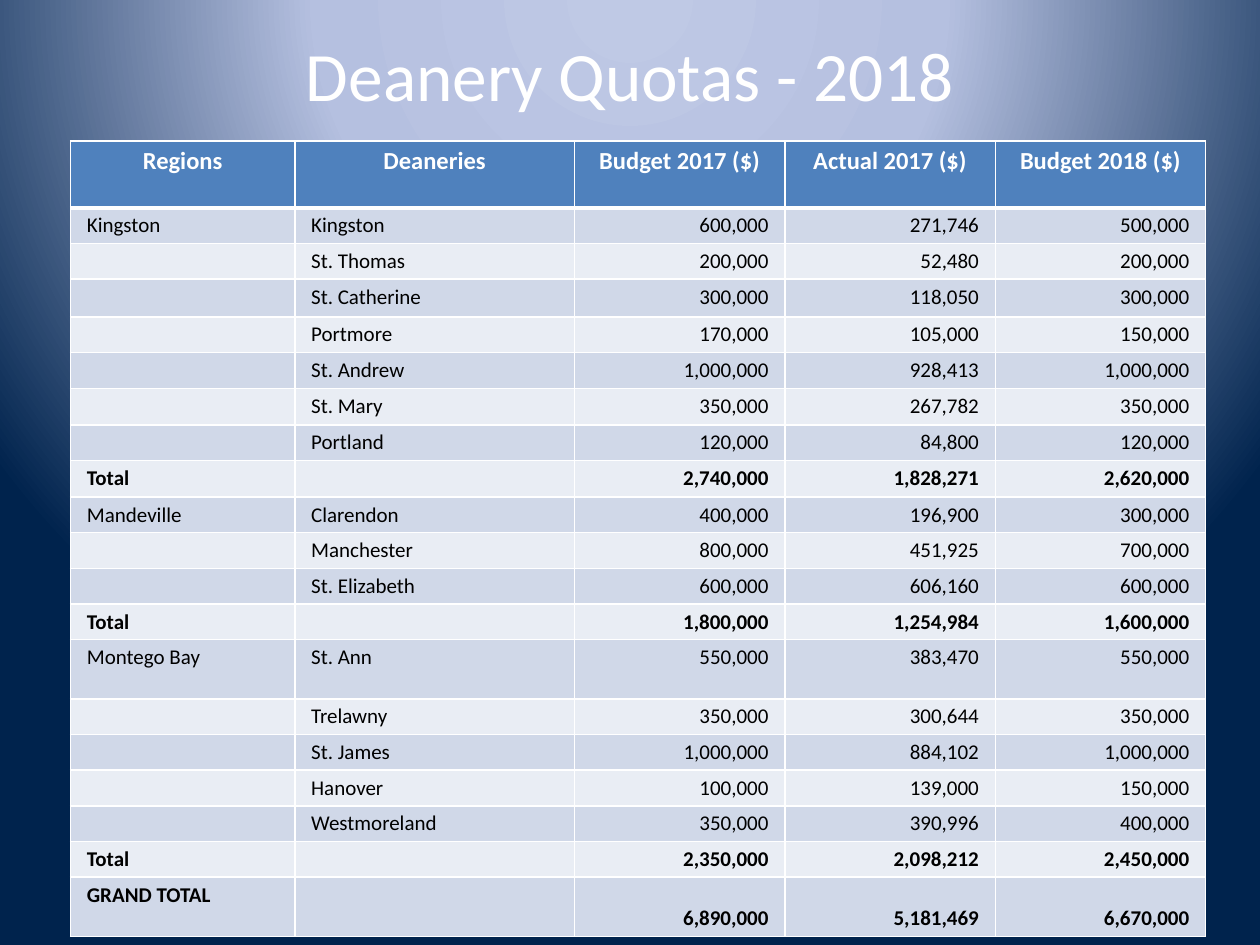
from lxml import etree
from pptx import Presentation
from pptx.dml.color import RGBColor
from pptx.enum.text import MSO_ANCHOR, PP_ALIGN
from pptx.oxml import parse_xml
from pptx.oxml.ns import qn
from pptx.util import Inches, Pt

LEFT, MID, RIGHT = PP_ALIGN.LEFT, PP_ALIGN.CENTER, PP_ALIGN.RIGHT
TOP, CENTRE, BOTTOM = MSO_ANCHOR.TOP, MSO_ANCHOR.MIDDLE, MSO_ANCHOR.BOTTOM
NS = "http://schemas.openxmlformats.org/drawingml/2006/main"
PNS = "http://schemas.openxmlformats.org/presentationml/2006/main"
FONT = "Calibri"
WHITE, BLACK, BLUE = "FFFFFF", "000000", "4F81BD"
BANDS = ("E9EDF4", "D0D8E8")
STOPS = ((0, "BFC9E5"), (40, "B5C0E0"), (100, "00234D"))
WIDTHS = (1.78, 2.22, 1.67, 1.67, 1.67)
HEIGHT = 0.28
TALL = {0: 0.53, 3: 0.3, 6: 0.29, 8: 0.29, 13: 0.47, 19: 0.47}
ROWS = (
    ("Regions", "Deaneries", "Budget 2017 ($)", "Actual 2017 ($)", "Budget 2018 ($)"),
    ("Kingston", "Kingston", "600,000", "271,746", "500,000"),
    ("", "St. Thomas", "200,000", "52,480", "200,000"),
    ("", "St. Catherine", "300,000", "118,050", "300,000"),
    ("", "Portmore", "170,000", "105,000", "150,000"),
    ("", "St. Andrew", "1,000,000", "928,413", "1,000,000"),
    ("", "St. Mary", "350,000", "267,782", "350,000"),
    ("", "Portland", "120,000", "84,800", "120,000"),
    ("Total", "", "2,740,000", "1,828,271", "2,620,000"),
    ("Mandeville", "Clarendon", "400,000", "196,900", "300,000"),
    ("", "Manchester", "800,000", "451,925", "700,000"),
    ("", "St. Elizabeth", "600,000", "606,160", "600,000"),
    ("Total", "", "1,800,000", "1,254,984", "1,600,000"),
    ("Montego Bay", "St. Ann", "550,000", "383,470", "550,000"),
    ("", "Trelawny", "350,000", "300,644", "350,000"),
    ("", "St. James", "1,000,000", "884,102", "1,000,000"),
    ("", "Hanover", "100,000", "139,000", "150,000"),
    ("", "Westmoreland", "350,000", "390,996", "400,000"),
    ("Total", "", "2,350,000", "2,098,212", "2,450,000"),
    ("GRAND TOTAL", "", "6,890,000", "5,181,469", "6,670,000"),
)


def rgb(code):
    """Turn a hex string into a colour."""
    return RGBColor.from_string(code)


def put_text(frame, text, size=12, color=BLACK, bold=False, align=LEFT):
    """Write one formatted paragraph into a text frame."""
    para = frame.paragraphs[0]
    para.alignment = align
    if not text:
        etree.SubElement(para._p, qn("a:endParaRPr"), sz=str(size * 100))
        return
    run = para.add_run()
    run.text = text
    font = run.font
    font.name, font.size, font.bold = FONT, Pt(size), bold
    font.color.rgb = rgb(color)


def paint_back(slide):
    """Give the slide its radial gradient."""
    stops = "".join(
        f'<a:gs pos="{pos * 1000}"><a:srgbClr val="{code}"/></a:gs>'
        for pos, code in STOPS
    )
    back = parse_xml(
        f'<p:bg xmlns:p="{PNS}" xmlns:a="{NS}"><p:bgPr>'
        f'<a:gradFill rotWithShape="1"><a:gsLst>{stops}</a:gsLst>'
        '<a:path path="circle"><a:fillToRect l="50000" t="-80000" '
        'r="50000" b="180000"/></a:path></a:gradFill>'
        "<a:effectLst/></p:bgPr></p:bg>"
    )
    slide._element.cSld.insert(0, back)


def add_title(slide, text):
    """Place and fill the title."""
    title = slide.shapes.title
    title.left, title.top = Inches(0.5), Inches(0.3)
    title.width, title.height = Inches(9), Inches(0.57)
    frame = title.text_frame
    frame.word_wrap = True
    frame.vertical_anchor = CENTRE
    put_text(frame, text, size=39.6, color=WHITE, align=MID)


def edge_cell(cell, base):
    """Draw white borders, with the given width at the bottom."""
    props = cell._tc.get_or_add_tcPr()
    for side, width in (("L", 1), ("R", 1), ("T", 1), ("B", base)):
        line = etree.SubElement(props, qn(f"a:ln{side}"), w=str(Pt(width)))
        fill = etree.SubElement(line, qn("a:solidFill"))
        etree.SubElement(fill, qn("a:srgbClr"), val=WHITE)


def fill_cell(cell, text, fill, anchor=TOP, base=1, **style):
    """Set the text, fill and edges of a cell."""
    edge_cell(cell, base)
    cell.fill.solid()
    cell.fill.fore_color.rgb = rgb(fill)
    cell.margin_left = cell.margin_right = Inches(0.13)
    cell.margin_top = cell.margin_bottom = Inches(0.04)
    cell.vertical_anchor = anchor
    put_text(cell.text_frame, text, **style)


def add_quotas(slide):
    """Add the table of quotas by region and deanery."""
    sizes = [TALL.get(row, HEIGHT) for row in range(len(ROWS))]
    table = slide.shapes.add_table(
        len(ROWS), len(WIDTHS), Inches(0.56), Inches(1.12),
        Inches(sum(WIDTHS)), Inches(sum(sizes)),
    ).table
    for col, width in enumerate(WIDTHS):
        table.columns[col].width = Inches(width)
    for row, values in enumerate(ROWS):
        table.rows[row].height = Inches(sizes[row])
        total = values[0].upper().endswith("TOTAL")
        for col, text in enumerate(values):
            cell = table.cell(row, col)
            if row == 0:
                fill_cell(cell, text, BLUE, base=3, size=14,
                          color=WHITE, bold=True, align=MID)
                continue
            number = col > 1
            low = number and row == len(ROWS) - 1
            fill_cell(cell, text, BANDS[row % 2], bold=total,
                      anchor=BOTTOM if low else TOP,
                      align=RIGHT if number else LEFT)


def main():
    """Build and save the slide."""
    deck = Presentation()
    deck.slide_width, deck.slide_height = Inches(10), Inches(7.5)
    slide = deck.slides.add_slide(deck.slide_layouts[5])
    paint_back(slide)
    add_title(slide, "Deanery Quotas - 2018")
    add_quotas(slide)
    deck.save("out.pptx")


if __name__ == "__main__":
    main()
